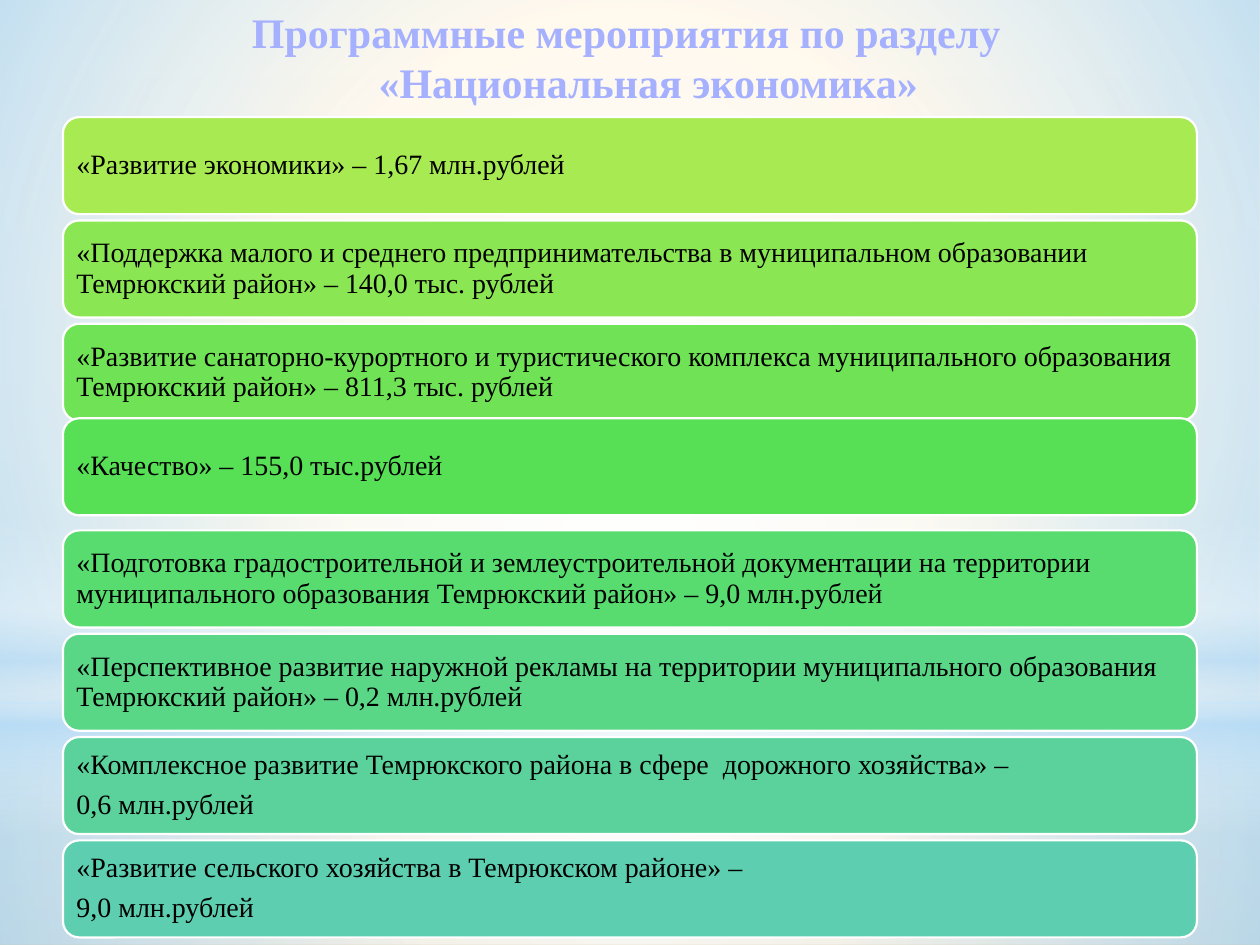
from typing import NamedTuple

from lxml import etree
from pptx import Presentation
from pptx.dml.color import RGBColor
from pptx.enum.shapes import MSO_SHAPE
from pptx.enum.text import MSO_ANCHOR, PP_ALIGN
from pptx.oxml.ns import qn
from pptx.util import Inches, Pt

RECT, OVAL = MSO_SHAPE.RECTANGLE, MSO_SHAPE.OVAL
ROUNDED = MSO_SHAPE.ROUNDED_RECTANGLE
MIDDLE, CENTER, LEFT = MSO_ANCHOR.MIDDLE, PP_ALIGN.CENTER, PP_ALIGN.LEFT
FONT = "Times New Roman"


class Stop(NamedTuple):
    position: int
    color: str
    opacity: int = 100


class Glow(NamedTuple):
    form: int
    top: float
    height: float
    stops: tuple[Stop, ...]
    radial: bool = True


class Program(NamedTuple):
    color: str
    lines: tuple[str, ...]
    shift: float = 0


BACKDROP = (Stop(0, "FFEFD1"), Stop(65, "F0EBD5"), Stop(100, "D1C39F"))

GLOWS = (
    Glow(RECT, 5.58, 1.92, (Stop(0, "FFFFFF", 91), Stop(37, "FFFFFF", 76), Stop(100, "B4DCFA", 79))),
    Glow(RECT, 0, 5.58, (Stop(0, "FFFFFF", 89), Stop(48, "FFFFFF", 62), Stop(100, "B4DCFA", 79))),
    Glow(RECT, 4.12, 2.5, (
        Stop(0, "FFFFFF", 0), Stop(29, "FFFFFF", 30), Stop(45, "B4DCFA", 40),
        Stop(55, "FFFFFF", 26), Stop(65, "B4DCFA", 60), Stop(100, "FFFFFF", 0),
    ), radial=False),
    Glow(OVAL, 1.75, 5.58, (Stop(0, "FFFFFF"), Stop(56, "FFFFFF", 0))),
)

HEADING = ("Программные мероприятия по разделу", "«Национальная экономика»")

PROGRAMS = (
    Program("A7EA52", ("«Развитие экономики» – 1,67 млн.рублей",)),
    Program("8BE653", ("«Поддержка малого и среднего предпринимательства в муниципальном "
                       "образовании Темрюкский район» – 140,0 тыс. рублей",)),
    Program("70E255", ("«Развитие санаторно-курортного и туристического комплекса муниципального "
                       "образования Темрюкский район» – 811,3 тыс. рублей",)),
    Program("57DF56", ("«Качество» – 155,0 тыс.рублей",), shift=-0.07),
    Program("58DB6F", ("«Подготовка градостроительной и землеустроительной документации на территории "
                       "муниципального образования Темрюкский район» – 9,0 млн.рублей",)),
    Program("59D686", ("«Перспективное развитие наружной рекламы на территории муниципального "
                       "образования Темрюкский район» – 0,2 млн.рублей",)),
    Program("5BD29C", ("«Комплексное развитие Темрюкского района в сфере  дорожного хозяйства» –",
                       "0,6 млн.рублей")),
    Program("5DCEAF", ("«Развитие сельского хозяйства в Темрюкском районе» –", "9,0 млн.рублей")),
)
FIRST_TOP, STEP, BAR_HEIGHT = 0.93, 0.82, 0.77


def rgb(color: str) -> RGBColor:
    return RGBColor.from_string(color)


def set_gradient(holder, stops: tuple[Stop, ...], radial: bool = False) -> None:
    """Replace the solid fill inside holder with a gradient."""
    gradient = etree.Element(qn("a:gradFill"), rotWithShape="1")
    stop_list = etree.SubElement(gradient, qn("a:gsLst"))
    for stop in stops:
        mark = etree.SubElement(stop_list, qn("a:gs"), pos=str(stop.position * 1000))
        color = etree.SubElement(mark, qn("a:srgbClr"), val=stop.color)
        if stop.opacity < 100:
            etree.SubElement(color, qn("a:alpha"), val=str(stop.opacity * 1000))
    if radial:
        circle = etree.SubElement(gradient, qn("a:path"), path="circle")
        etree.SubElement(circle, qn("a:fillToRect"), l="50000", t="50000", r="50000", b="50000")
    else:
        etree.SubElement(gradient, qn("a:lin"), ang="5400000", scaled="0")
    solid = holder.find(qn("a:solidFill"))
    holder.replace(solid, gradient)


def add_run(paragraph, text: str, size: int, color: str, bold: bool = False) -> None:
    run = paragraph.add_run()
    run.text = text
    run.font.name, run.font.size, run.font.bold = FONT, Pt(size), bold
    run.font.color.rgb = rgb(color)


def draw_backdrop(slide) -> None:
    slide.background.fill.solid()
    slide.background.fill.fore_color.rgb = rgb("FFFFFF")
    set_gradient(slide.element.find(".//" + qn("p:bgPr")), BACKDROP)


def draw_glow(slide, glow: Glow) -> None:
    light = slide.shapes.add_shape(glow.form, 0, Inches(glow.top), Inches(10), Inches(glow.height))
    light.shadow.inherit = False
    light.line.fill.background()
    light.fill.solid()
    light.fill.fore_color.rgb = rgb("FFFFFF")
    set_gradient(light.element.spPr, glow.stops, glow.radial)


def draw_heading(slide) -> None:
    heading = slide.shapes.add_textbox(Inches(0.47), 0, Inches(9), Inches(0.87))
    frame = heading.text_frame
    frame.word_wrap = True
    paragraph = frame.paragraphs[0]
    paragraph.alignment = CENTER
    hanging = Inches(0.35)
    properties = paragraph._p.get_or_add_pPr()
    properties.set("marL", str(hanging))
    properties.set("indent", str(-hanging))
    for index, line in enumerate(HEADING):
        if index:
            paragraph.add_line_break()
        add_run(paragraph, line, 24, "A5B0FF", bold=True)


def draw_program(slide, program: Program, top: float) -> None:
    bar = slide.shapes.add_shape(ROUNDED, Inches(0.5), Inches(top), Inches(9), Inches(BAR_HEIGHT))
    bar.shadow.inherit = False
    bar.fill.solid()
    bar.fill.fore_color.rgb = rgb(program.color)
    bar.line.color.rgb = rgb("FFFFFF")
    bar.line.width = Pt(1.25)
    frame = bar.text_frame
    frame.word_wrap = True
    frame.vertical_anchor = MIDDLE
    frame.margin_left = frame.margin_right = Inches(0.07)
    frame.margin_top = frame.margin_bottom = Inches(0.07)
    for index, line in enumerate(program.lines):
        paragraph = frame.add_paragraph() if index else frame.paragraphs[0]
        paragraph.alignment = LEFT
        paragraph.line_spacing = 0.9
        paragraph.space_after = Pt(5.6)
        add_run(paragraph, line, 16, "000000")


def main() -> None:
    deck = Presentation()
    deck.slide_width, deck.slide_height = Inches(10), Inches(7.5)
    slide = deck.slides.add_slide(deck.slide_layouts[6])

    # Background with soft light
    draw_backdrop(slide)
    for glow in GLOWS:
        draw_glow(slide, glow)

    # Heading and the list of programs
    draw_heading(slide)
    for row, program in enumerate(PROGRAMS):
        draw_program(slide, program, FIRST_TOP + row * STEP + program.shift)

    deck.save("out.pptx")


if __name__ == "__main__":
    main()
